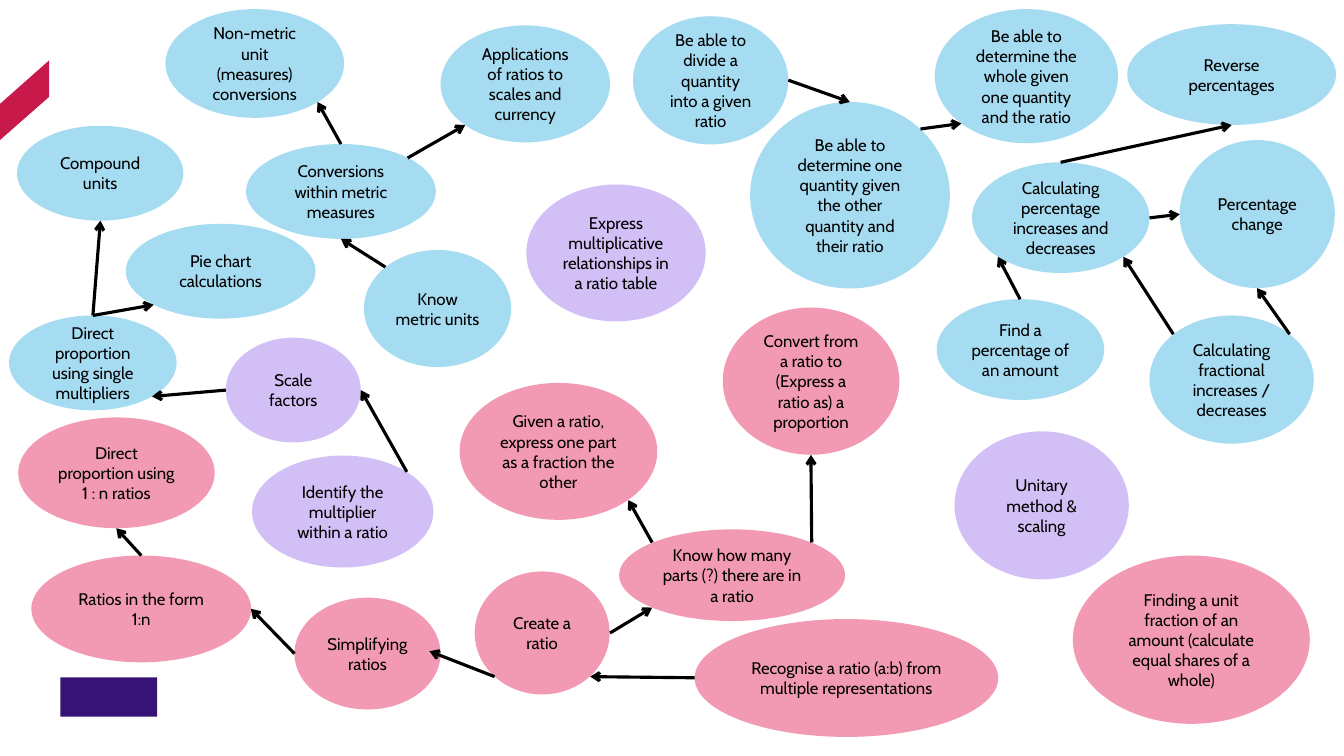
from lxml import etree
from pptx import Presentation
from pptx.dml.color import RGBColor
from pptx.enum.shapes import MSO_CONNECTOR, MSO_SHAPE
from pptx.enum.text import MSO_ANCHOR, PP_ALIGN
from pptx.oxml.ns import qn
from pptx.util import Cm, Pt

OVAL, RECT = MSO_SHAPE.OVAL, MSO_SHAPE.RECTANGLE
STRAIGHT = MSO_CONNECTOR.STRAIGHT
MIDDLE, CENTER = MSO_ANCHOR.MIDDLE, PP_ALIGN.CENTER

# Topics by colour: key -> (left, top, width, height in inches), text
TOPICS = {
    "A6DCF1": {
        "scales": ((4.37, 0.25, 1.68, 1.16), "Applications of ratios to scales and currency"),
        "direct": ((0.09, 3.13, 1.66, 0.94), "Direct proportion using single multipliers"),
        "percent": ((9.64, 1.61, 1.76, 1.1), "Calculating percentage increases and decreases"),
        "fraction": ((11.4, 3.13, 1.63, 1.27), "Calculating fractional increases / decreases"),
        "reverse": ((11.18, 0.24, 2.07, 1), "Reverse percentages"),
        "change": ((11.7, 1.39, 1.54, 1.47), "Percentage change"),
        "nonmetric": ((1.64, 0.09, 1.77, 1.08), "Non-metric unit (measures) conversions"),
        "divide": ((6.28, 0.16, 1.54, 1.27), "Be able to divide a quantity into a given ratio"),
        "whole": ((9.27, 0.09, 1.82, 1.33),
                  "Be able to determine the whole given one quantity and the ratio"),
        "other": ((7.44, 1.01, 1.98, 1.85),
                  "Be able to determine one quantity given the other quantity and their ratio"),
        "compound": ((0.17, 1.25, 1.65, 0.94), "Compound units"),
        "convert": ((2.44, 1.43, 1.88, 0.94), "Conversions within metric measures"),
        "metric": ((3.61, 2.48, 1.46, 1.16), "Know metric units"),
        "pie": ((1.25, 2.22, 1.88, 0.94), "Pie chart calculations"),
        "find": ((9.29, 2.97, 1.66, 1), "Find a percentage of an amount"),
    },
    "D2BFF5": {
        "identify": ((2.5, 4.52, 1.8, 1.11), "Identify the multiplier within a ratio"),
        "unitary": ((9.47, 4.28, 1.73, 1.47), "Unitary method & scaling"),
        "table": ((5.22, 1.83, 1.78, 1.36),
                  "Express multiplicative relationships in a ratio table"),
        "factors": ((2.24, 3.35, 1.34, 1.04), "Scale factors"),
    },
    "F29AB3": {
        "unit": ((10.64, 5.51, 2.35, 1.67),
                 "Finding a unit fraction of an amount (calculate equal shares of a whole)"),
        "create": ((4.71, 5.67, 1.34, 1.22), "Create a ratio"),
        "recognise": ((6.89, 6.14, 3.01, 1.17),
                      "Recognise a ratio (a:b) from multiple representations"),
        "form": ((0.31, 5.51, 2.18, 1.06), "Ratios in the form 1:n"),
        "proportion": ((7.17, 3.05, 1.75, 1.46),
                       "Convert from a ratio to (Express a ratio as) a proportion"),
        "given": ((4.56, 3.8, 1.96, 1.36),
                  "Given a ratio, express one part as a fraction the other"),
        "simplify": ((2.92, 5.93, 1.45, 1.11), "Simplifying ratios"),
        "parts": ((6.14, 5.25, 2.24, 0.91), "Know how many parts (?) there are in a ratio"),
        "ratios": ((0.18, 4.14, 1.95, 1.1), "Direct proportion using 1 : n ratios"),
    },
}

# Arrows: topic and compass side at each end
ARROWS = [
    ("convert NE", "scales SW"), ("fraction NE", "change S"),
    ("fraction NW", "percent SE"), ("percent N", "reverse S"),
    ("percent E", "change W"), ("convert N", "nonmetric SE"),
    ("metric NW", "convert S"), ("direct N", "pie SW"),
    ("other NE", "whole SW"), ("divide E", "other N"),
    ("direct N", "compound S"), ("find N", "percent SW"),
    ("identify NE", "factors E"), ("factors W", "direct SE"),
    ("simplify W", "form E"), ("recognise W", "create SE"),
    ("create SW", (4.26, 6.46)), ("parts NE", "proportion S"),
    ("parts NW", "given SE"), ("form N", "ratios S"),
    ("create E", "parts SW"),
]
STRIPE = [(0.49, 0.6), (0.49, 0.96), (0, 1.39), (0, 1.03)]
BADGE = (0.6, 6.72, 0.96, 0.39)
FRAME = {"word_wrap": True, "vertical_anchor": MIDDLE}
FONT = {"name": "Cabin", "size": Pt(12)}


def span(inches):
    return Cm(round(inches * 2.54, 2))


def color(code):
    return RGBColor.from_string(code)


def style(target, values):
    for name, value in values.items():
        setattr(target, name, value)


def paint(shape, code):
    shape.shadow.inherit = False
    shape.fill.solid()
    shape.fill.fore_color.rgb = color(code)
    shape.line.fill.background()


def block(kind, box, code):
    shape = slide.shapes.add_shape(kind, *map(span, box))
    paint(shape, code)
    return shape


def topic(box, text, code):
    frame = block(OVAL, box, code).text_frame
    style(frame, FRAME)
    line = frame.paragraphs[0]
    line.alignment = CENTER
    run = line.add_run()
    run.text = text
    style(run.font, FONT)
    run.font.color.rgb = color("000000")


def point(end):
    """Place an arrow end on the edge of its oval."""
    if isinstance(end, tuple):
        return end
    name, side = end.split()
    left, top, width, height = boxes[name]
    dx = ("E" in side) - ("W" in side)
    dy = ("S" in side) - ("N" in side)
    reach = 0.5 / (dx * dx + dy * dy) ** 0.5
    return left + width * (0.5 + dx * reach), top + height * (0.5 + dy * reach)


def arrow(start, end):
    places = map(span, point(start) + point(end))
    link = slide.shapes.add_connector(STRAIGHT, *places)
    link.line.width = Pt(2.25)
    link.line.color.rgb = color("000000")
    etree.SubElement(link.line._get_or_add_ln(), qn("a:tailEnd"), type="arrow")
    etree.SubElement(link._element.spPr, qn("a:effectLst"))


deck = Presentation()
deck.slide_width, deck.slide_height = span(13.33), span(7.5)
slide = deck.slides.add_slide(deck.slide_layouts[6])

# Corner stripe and badge
first, *rest = [(span(x), span(y)) for x, y in STRIPE]
outline = slide.shapes.build_freeform(*first)
outline.add_line_segments(rest, close=True)
paint(outline.convert_to_shape(), "C8194B")
block(RECT, BADGE, "371376")

# Topics and the arrows between them
boxes = {}
for code, group in TOPICS.items():
    for name, (box, text) in group.items():
        boxes[name] = box
        topic(box, text, code)
for start, end in ARROWS:
    arrow(start, end)

deck.save("out.pptx")
